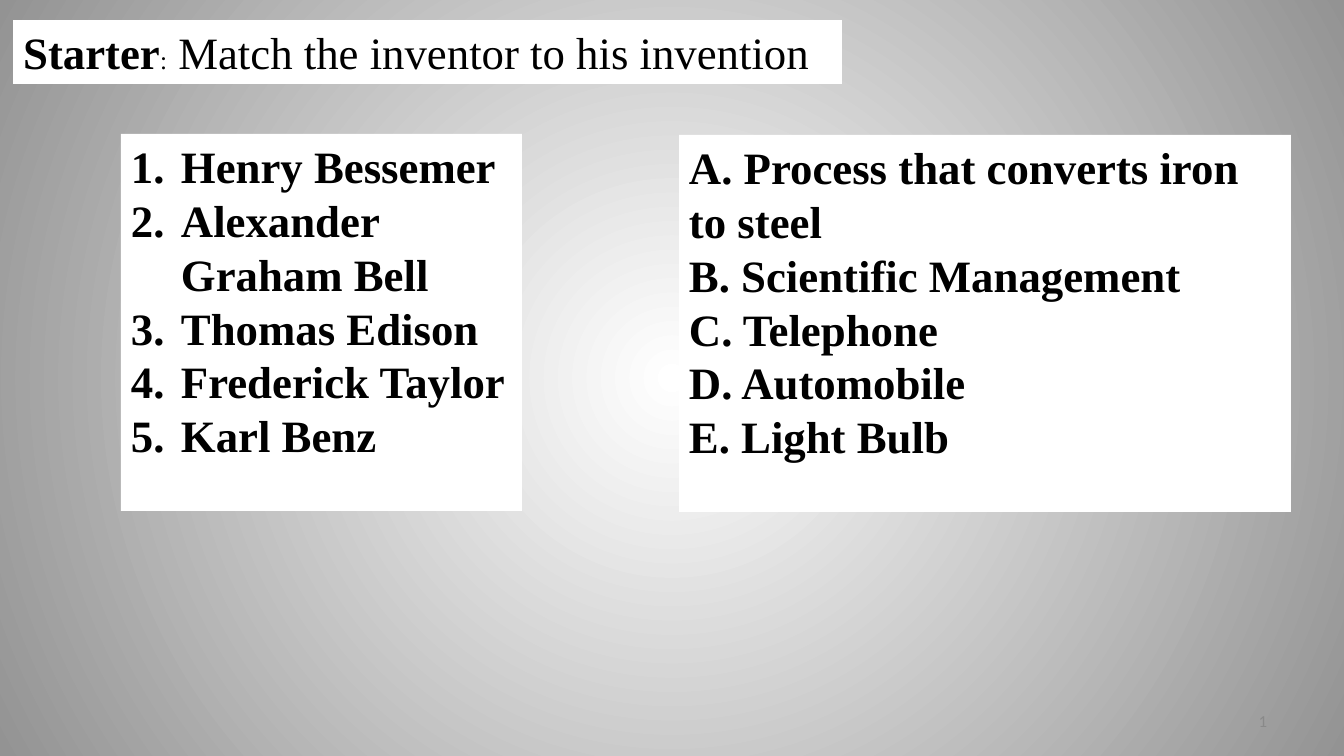
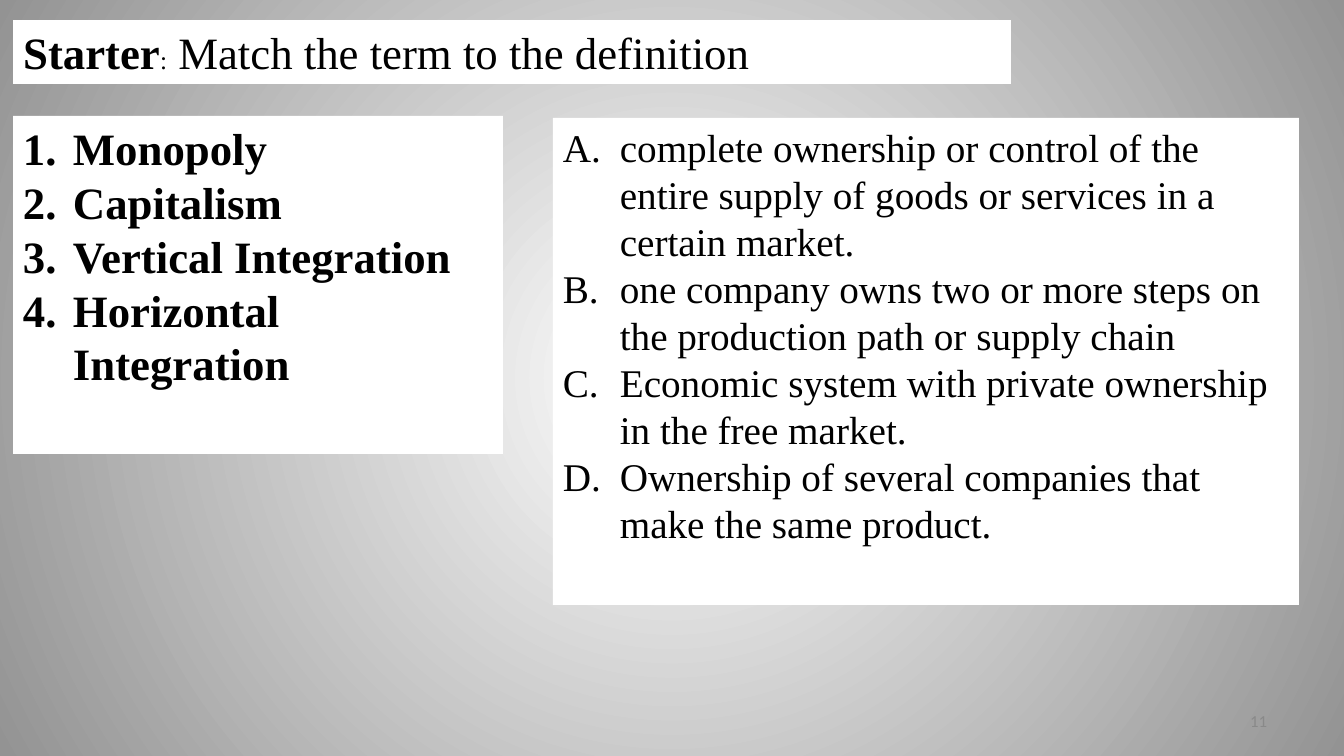
from lxml.etree import SubElement
from pptx import Presentation
from pptx.dml.color import RGBColor
from pptx.enum.shapes import MSO_SHAPE
from pptx.enum.text import MSO_ANCHOR, MSO_AUTO_SIZE, PP_ALIGN
from pptx.oxml.ns import qn
from pptx.util import Emu, Pt

BLACK = RGBColor(0x00, 0x00, 0x00)
WHITE = RGBColor(0xFF, 0xFF, 0xFF)
EDGE_GREY = RGBColor(0x93, 0x93, 0x93)
NUMBER_GREY = RGBColor(0x89, 0x89, 0x89)
SERIF = "Times New Roman"
TITLE_ONLY = 5
NUMBERS, LETTERS = "arabicPeriod", "alphaUcPeriod"


def px(n):
    return Emu(round(n * 914400 / 100.8))


def place(shape, left, top, width, height):
    shape.left, shape.top = px(left), px(top)
    shape.width, shape.height = px(width), px(height)


def add_run(p, text, size, bold=False, color=BLACK, font=SERIF):
    r = p.add_run()
    r.text = text
    r.font.name, r.font.size, r.font.bold = font, Pt(size), bold
    r.font.color.rgb = color


def set_background(master):
    """Radial gradient, white in the middle, shared by all slides."""
    fill = master.background.fill
    fill.gradient()
    for stop, color in zip(fill.gradient_stops, (WHITE, EDGE_GREY)):
        stop.color.rgb = color
    grad = master.element.find(".//" + qn("a:gradFill"))
    for lin in grad.findall(qn("a:lin")):
        grad.remove(lin)
    circle = SubElement(grad, qn("a:path"), path="circle")
    SubElement(circle, qn("a:fillToRect"),
               {side: "50000" for side in "ltrb"})


def set_numbering(p, scheme, indent):
    pPr = p._p.get_or_add_pPr()
    pPr.set("marL", str(px(indent)))
    pPr.set("indent", str(-px(indent)))
    clr = SubElement(pPr, qn("a:buClr"))
    SubElement(clr, qn("a:srgbClr"), val=str(BLACK))
    SubElement(pPr, qn("a:buFont"), typeface=SERIF)
    SubElement(pPr, qn("a:buAutoNum"), type=scheme)


def add_starter(prs, task, width, number):
    """New slide with its starter title and slide number."""
    s = prs.slides.add_slide(prs.slide_layouts[TITLE_ONLY])
    title = s.shapes.title
    place(title, 13, 20, width, 64)
    title.fill.solid()
    title.fill.fore_color.rgb = WHITE
    tf = title.text_frame
    tf.auto_size = MSO_AUTO_SIZE.NONE
    tf.vertical_anchor = MSO_ANCHOR.TOP
    p = tf.paragraphs[0]
    p.alignment = PP_ALIGN.LEFT
    add_run(p, "Starter", 32, bold=True)
    add_run(p, ":", 18)
    add_run(p, " " + task, 32)

    tf = s.shapes.add_textbox(px(1177), px(701), px(100), px(40)).text_frame
    tf.word_wrap = True
    tf.vertical_anchor = MSO_ANCHOR.MIDDLE
    p = tf.paragraphs[0]
    p.alignment = PP_ALIGN.RIGHT
    add_run(p, str(number), 12, color=NUMBER_GREY, font="Calibri")
    return s


def add_panel(s, box, lines, size=32, bold=True, scheme=None, indent=50):
    """White panel with one paragraph a line, numbered if a scheme is given."""
    sp = s.shapes.add_shape(MSO_SHAPE.RECTANGLE, *map(px, box))
    sp.shadow.inherit = False
    sp.fill.solid()
    sp.fill.fore_color.rgb = WHITE
    sp.line.fill.background()
    tf = sp.text_frame
    tf.word_wrap = True
    tf.vertical_anchor = MSO_ANCHOR.TOP
    for i, line in enumerate(lines):
        p = tf.add_paragraph() if i else tf.paragraphs[0]
        p.alignment = PP_ALIGN.LEFT
        if scheme:
            set_numbering(p, scheme, indent)
        add_run(p, line, size, bold)


def main():
    prs = Presentation()
    prs.slide_width, prs.slide_height = px(1344), px(756)
    set_background(prs.slide_master)

    # Inventors and inventions
    s = add_starter(prs, "Match the inventor to his invention", 829, 1)
    add_panel(s, (121, 134, 401, 377), [
        "Henry Bessemer",
        "Alexander Graham Bell",
        "Thomas Edison",
        "Frederick Taylor",
        "Karl Benz",
    ], scheme=NUMBERS)
    add_panel(s, (679, 135, 612, 377), [
        "A. Process that converts iron to steel",
        "B. Scientific Management",
        "C. Telephone",
        "D. Automobile",
        "E. Light Bulb",
    ])

    # Terms and definitions
    s = add_starter(prs, "Match the term to the definition", 998, 11)
    add_panel(s, (13, 116, 490, 338), [
        "Monopoly",
        "Capitalism",
        "Vertical Integration",
        "Horizontal Integration",
    ], scheme=NUMBERS)
    add_panel(s, (553, 118, 746, 487), [
        "complete ownership or control of the entire supply of goods "
        "or services in a certain market.",
        "one company owns two or more steps on the production path "
        "or supply chain",
        "Economic system with private ownership in the free market.",
        "Ownership of several companies that make the same product.",
    ], size=28, bold=False, scheme=LETTERS, indent=57)

    prs.save("out.pptx")


if __name__ == "__main__":
    main()
